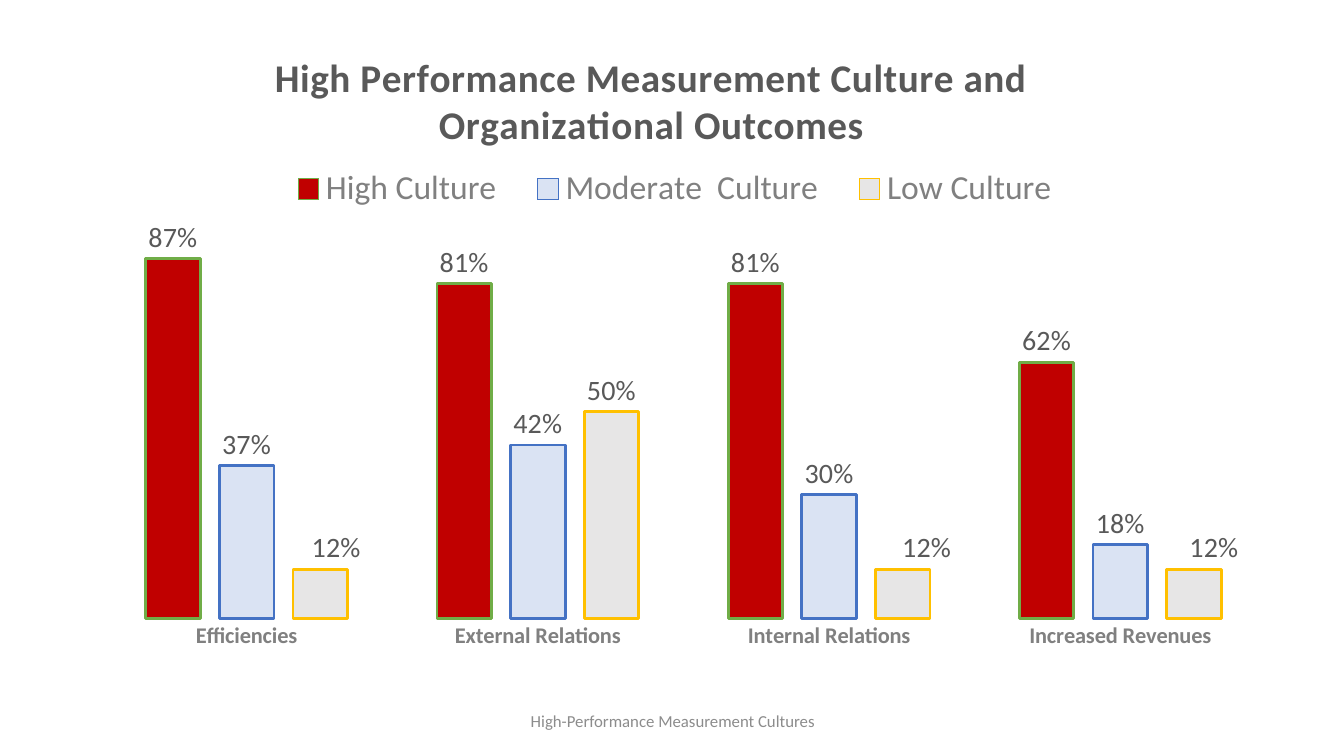
from lxml import etree
from pptx import Presentation
from pptx.chart.data import CategoryChartData
from pptx.dml.color import RGBColor
from pptx.enum.chart import XL_CHART_TYPE, XL_LABEL_POSITION, XL_LEGEND_POSITION, XL_TICK_MARK
from pptx.enum.text import MSO_ANCHOR, PP_ALIGN
from pptx.oxml.ns import qn
from pptx.util import Emu, Pt

COLUMNS = XL_CHART_TYPE.COLUMN_CLUSTERED
OUTSIDE_END = XL_LABEL_POSITION.OUTSIDE_END
LEGEND_TOP = XL_LEGEND_POSITION.TOP
NO_TICK = XL_TICK_MARK.NONE
MIDDLE = MSO_ANCHOR.MIDDLE
CENTER = PP_ALIGN.CENTER

FONT = "Calibri"
TITLE = "High Performance Measurement Culture and Organizational Outcomes"
FOOTER = "High-Performance Measurement Cultures"
CATEGORIES = ["Efficiencies", "External Relations", "Internal Relations", "Increased Revenues"]
SERIES = [
    ("High Culture", [0.87, 0.81, 0.81, 0.62], "C00000", "70AD47"),
    ("Moderate  Culture", [0.37, 0.42, 0.3, 0.18], "DAE3F3", "4472C4"),
    ("Low Culture", [0.12, 0.5, 0.12, 0.12], "E7E6E6", "FFC000"),
]
LABEL_SHIFTS = {0: 16, 2: 24, 3: 20}

PX = 9071
SLIDE_SIZE = (1344, 756)
CHART_BOX = (77, 7, 1214, 656)
PLOT_BOX = (101, 205, 1165, 414)
LEGEND_BOX = (268, 166, 814, 46)
TITLE_POSITION = (268, 44)
FOOTER_BOX = (446, 701, 454, 40)


def px(*lengths):
    return [Emu(length * PX) for length in lengths]


def color(value):
    return RGBColor.from_string(value)


def style_font(font, size, fill, bold=False):
    font.name = FONT
    font.size = Pt(size)
    font.bold = bold
    font.color.rgb = color(fill)


def write_text(frame, text, align=CENTER, **style):
    paragraph = frame.paragraphs[0]
    paragraph.alignment = align
    run = paragraph.add_run()
    run.text = text
    style_font(run.font, **style)


def set_layout(element, index=1, **values):
    for old in element.findall(qn("c:layout")):
        element.remove(old)
    layout = etree.Element(qn("c:layout"))
    manual = etree.SubElement(layout, qn("c:manualLayout"))
    for name, value in values.items():
        etree.SubElement(manual, qn(f"c:{name}")).set("val", str(value))
    element.insert(index, layout)


def chart_fractions(left, top, *size):
    chart_left, chart_top, chart_width, chart_height = CHART_BOX
    lengths = (left - chart_left, top - chart_top, *size)
    totals = (chart_width, chart_height) * 2
    return {name: round(length / total, 4)
            for name, length, total in zip("xywh", lengths, totals)}


def add_culture_chart(slide):
    data = CategoryChartData(number_format="0%")
    data.categories = CATEGORIES
    for name, values, _, _ in SERIES:
        data.add_series(name, values)
    chart = slide.shapes.add_chart(COLUMNS, *px(*CHART_BOX), data).chart
    style_font(chart.font, 10, "000000")

    write_text(chart.chart_title.text_frame, TITLE, size=28, fill="595959", bold=True)
    chart.chart_title.include_in_layout = False
    title_font = chart.chart_title.text_frame.paragraphs[0].runs[0].font
    title_font._element.set("spc", "50")
    chart.has_legend = True
    chart.legend.position = LEGEND_TOP
    chart.legend.include_in_layout = False
    style_font(chart.legend.font, 24, "808080")

    edges = {"xMode": "edge", "yMode": "edge"}
    set_layout(chart.chart_title._element, **edges, **chart_fractions(*TITLE_POSITION))
    set_layout(chart.legend._element, **edges, **chart_fractions(*LEGEND_BOX))
    plot_area = chart._chartSpace.find(".//" + qn("c:plotArea"))
    set_layout(plot_area, 0, layoutTarget="inner", **edges, **chart_fractions(*PLOT_BOX))

    category_axis = chart.category_axis
    category_axis.major_tick_mark = NO_TICK
    category_axis.format.line.fill.background()
    style_font(category_axis.tick_labels.font, 16, "808080", bold=True)
    value_axis = chart.value_axis
    value_axis.minimum_scale = 0
    value_axis.maximum_scale = 1
    value_axis.has_major_gridlines = False
    value_axis.visible = False

    plot = chart.plots[0]
    plot.gap_width = 164
    plot.overlap = -35
    plot.vary_by_categories = False
    for series, (_, _, fill, line) in zip(plot.series, SERIES):
        series.format.fill.solid()
        series.format.fill.fore_color.rgb = color(fill)
        series.format.line.color.rgb = color(line)
        series.format.line.width = Pt(2)
        labels = series.data_labels
        labels.show_value = True
        labels.position = OUTSIDE_END
        labels.number_format = "0%"
        labels.number_format_is_linked = False
        style_font(labels.font, 20, "595959")

    low_culture = plot.series[2]
    for index, shift in LABEL_SHIFTS.items():
        label = low_culture.points[index].data_label
        label.position = OUTSIDE_END
        style_font(label.font, 20, "595959")
    for element in low_culture.data_labels._element.findall(qn("c:dLbl")):
        shift = LABEL_SHIFTS[int(element.find(qn("c:idx")).get("val"))]
        set_layout(element, x=round(shift / CHART_BOX[2], 4), y=0)


def add_footer(slide):
    frame = slide.shapes.add_textbox(*px(*FOOTER_BOX)).text_frame
    frame.word_wrap = True
    frame.vertical_anchor = MIDDLE
    write_text(frame, FOOTER, size=12, fill="8C8C8C")


def main():
    presentation = Presentation()
    presentation.slide_width, presentation.slide_height = px(*SLIDE_SIZE)
    slide = presentation.slides.add_slide(presentation.slide_layouts[6])
    add_footer(slide)
    add_culture_chart(slide)
    presentation.save("out.pptx")


if __name__ == "__main__":
    main()
